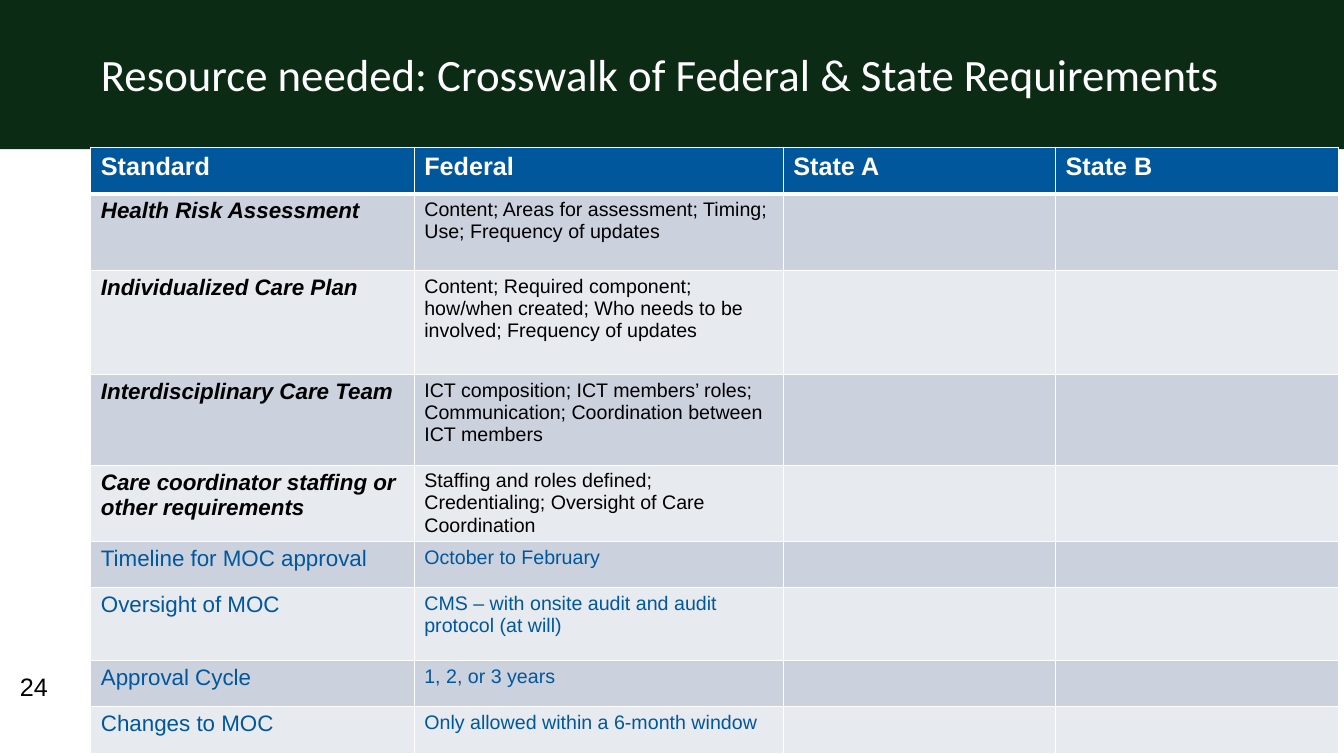
"""Builds the slide with the crosswalk table of federal and state requirements."""
from lxml.etree import SubElement
from pptx import Presentation
from pptx.dml.color import RGBColor
from pptx.enum.shapes import MSO_SHAPE as Shape
from pptx.enum.text import MSO_ANCHOR as Anchor, PP_ALIGN as Align
from pptx.oxml.ns import qn
from pptx.util import Cm, Pt

TITLE = "Resource needed: Crosswalk of Federal & State Requirements"
PAGE_NUMBER = "24"
HEADERS = ["Standard", "Federal", "State A", "State B"]
CARE_STANDARDS = [
    ("Health Risk Assessment",
     "Content; Areas for assessment; Timing; Use; Frequency of updates"),
    ("Individualized Care Plan",
     "Content; Required component; how/when created; Who needs to be involved; "
     "Frequency of updates"),
    ("Interdisciplinary Care Team",
     "ICT composition; ICT members’ roles; Communication; Coordination between ICT members"),
    ("Care coordinator staffing or other requirements",
     "Staffing and roles defined; Credentialing; Oversight of Care Coordination"),
]
MOC_STANDARDS = [
    ("Timeline for MOC approval", "October to February"),
    ("Oversight of MOC", "CMS – with onsite audit and audit protocol (at will)"),
    ("Approval Cycle", "1, 2, or 3 years"),
    ("Changes to MOC", "Only allowed within a 6-month window"),
]
COLUMN_WIDTHS = [8.15, 9.3, 6.86, 7.14]
ROW_HEIGHTS = [1.17, 1.93, 2.62, 2.29, 1.83, 1.17, 1.83, 1.17, 1.17]
COLORS = {"band": "0C2B15", "blue": "01579B", "white": "FFFFFF", "black": "000000",
          "dark row": "CCD1DE", "light row": "E7EAEF"}
SLIDE_WIDTH, SLIDE_HEIGHT = 33.87, 19.05
LEFT = 2.29


def color(name):
    return RGBColor.from_string(COLORS[name])


def format_text(text_frame, size, color_name, font_name="Arial", bold=False, italic=False):
    for paragraph in text_frame.paragraphs:
        paragraph.alignment = Align.LEFT
        for run in paragraph.runs:
            font = run.font
            font.name, font.size = font_name, Pt(size)
            font.bold, font.italic = bold, italic
            font.color.rgb = color(color_name)


def add_borders(cell, top, bottom):
    properties = cell._tc.get_or_add_tcPr()
    for side, width in (("L", 1), ("R", 1), ("T", top), ("B", bottom)):
        line = SubElement(properties, qn(f"a:ln{side}"), w=str(Pt(width)))
        fill = SubElement(line, qn("a:solidFill"))
        SubElement(fill, qn("a:srgbClr"), val=COLORS["white"])


def add_title(slide):
    band = slide.shapes.add_shape(Shape.RECTANGLE, 0, 0, Cm(SLIDE_WIDTH), Cm(3.76))
    band.shadow.inherit = False
    band.fill.solid()
    band.fill.fore_color.rgb = color("band")
    band.line.fill.background()
    slide.shapes._spTree.insert(2, band._element)

    title = slide.shapes.title
    title.left, title.top, title.width, title.height = Cm(LEFT), Cm(1.04), Cm(30.2), Cm(1.63)
    title.text_frame.text = TITLE
    title.text_frame.vertical_anchor = Anchor.MIDDLE
    format_text(title.text_frame, 32, "white", "Calibri")


def add_crosswalk(slide):
    rows = [HEADERS, *CARE_STANDARDS, *MOC_STANDARDS]
    table = slide.shapes.add_table(
        len(rows), len(HEADERS), Cm(LEFT), Cm(3.71),
        Cm(sum(COLUMN_WIDTHS)), Cm(sum(ROW_HEIGHTS))).table
    for column, width in zip(table.columns, COLUMN_WIDTHS):
        column.width = Cm(width)
    for row, height in zip(table.rows, ROW_HEIGHTS):
        row.height = Cm(height)

    for row_index, texts in enumerate(rows):
        is_header = row_index == 0
        is_care = 0 < row_index <= len(CARE_STANDARDS)
        band = "blue" if is_header else "dark row" if row_index % 2 else "light row"
        text_color = "white" if is_header else "black" if is_care else "blue"
        for column_index in range(len(HEADERS)):
            cell = table.cell(row_index, column_index)
            add_borders(cell, 3 if row_index == 1 else 1, 3 if is_header else 1)
            cell.fill.solid()
            cell.fill.fore_color.rgb = color(band)
            if column_index < len(texts):
                is_standard = is_care and column_index == 0
                size = 18 if is_header else 14 if column_index else 16
                cell.text_frame.text = texts[column_index]
                format_text(cell.text_frame, size, text_color,
                            bold=is_header or is_standard, italic=is_standard)


def add_page_number(slide):
    box = slide.shapes.add_textbox(Cm(0.25), Cm(16.79), Cm(2.03), Cm(1.45))
    box.text_frame.word_wrap = True
    box.text_frame.text = PAGE_NUMBER
    format_text(box.text_frame, 18, "black")


def main():
    presentation = Presentation()
    presentation.slide_width, presentation.slide_height = Cm(SLIDE_WIDTH), Cm(SLIDE_HEIGHT)
    slide = presentation.slides.add_slide(presentation.slide_layouts[5])
    add_title(slide)
    add_crosswalk(slide)
    add_page_number(slide)
    presentation.save("out.pptx")


if __name__ == "__main__":
    main()
